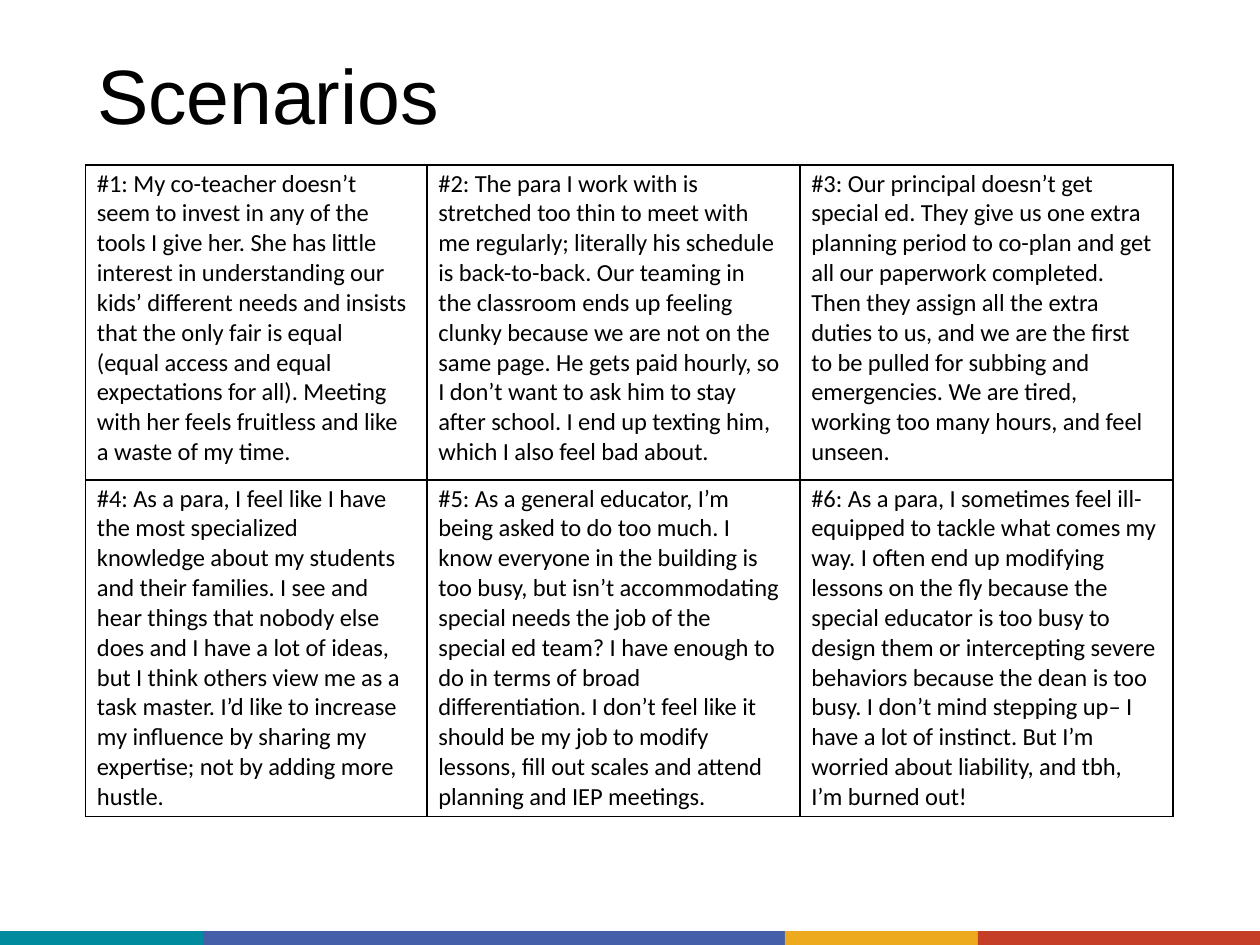
from dataclasses import dataclass

from lxml.etree import SubElement
from pptx import Presentation
from pptx.dml.color import RGBColor
from pptx.enum.shapes import MSO_SHAPE
from pptx.enum.text import MSO_ANCHOR, PP_ALIGN
from pptx.oxml.ns import qn
from pptx.util import Inches, Pt


@dataclass(frozen=True)
class Theme:
    """Colours, fonts and type sizes of the slide."""
    ink: str = "000000"
    teal: str = "008B9F"
    blue: str = "455FA9"
    gold: str = "EEAA1F"
    red: str = "C53E28"
    head: str = "Arial"
    body: str = "Calibri"
    big: int = 44
    small: int = 14
    rule: int = 1
    track: int = -5


THEME = Theme()
BANDS = [(1.61, THEME.teal), (4.62, THEME.blue), (1.53, THEME.gold), (2.24, THEME.red)]
COLS = [2.71, 2.96, 2.96]
ROWS = [2.5, 2.67]
PADS = [[0.15, 0.15, 0.16], [0.15, 0.15, 0.12]]
CASES = [
    [
        "#1: My co-teacher doesn’t seem to invest in any of the tools I give her. "
        "She has little interest in understanding our kids’ different needs and insists "
        "that the only fair is equal (equal access and equal expectations for all). "
        "Meeting with her feels fruitless and like a waste of my time.",
        "#2: The para I work with is stretched too thin to meet with me regularly; "
        "literally his schedule is back-to-back. Our teaming in the classroom ends up "
        "feeling clunky because we are not on the same page. He gets paid hourly, so "
        "I don’t want to ask him to stay after school. I end up texting him, "
        "which I also feel bad about.",
        "#3: Our principal doesn’t get special ed. They give us one extra planning "
        "period to co-plan and get all our paperwork completed.\n"
        "Then they assign all the extra duties to us, and we are the first to be pulled "
        "for subbing and emergencies. We are tired, working too many hours, and feel unseen.",
    ],
    [
        "#4: As a para, I feel like I have the most specialized knowledge about my students "
        "and their families. I see and hear things that nobody else does and I have a lot "
        "of ideas, but I think others view me as a task master. I’d like to increase my "
        "influence by sharing my expertise; not by adding more hustle.",
        "#5: As a general educator, I’m being asked to do too much. I know everyone in the "
        "building is too busy, but isn’t accommodating special needs the job of the special "
        "ed team? I have enough to do in terms of broad differentiation. I don’t feel like "
        "it should be my job to modify lessons, fill out scales and attend planning and "
        "IEP meetings.",
        "#6: As a para, I sometimes feel ill-equipped to tackle what comes my way. I often "
        "end up modifying lessons on the fly because the special educator is too busy to "
        "design them or intercepting severe behaviors because the dean is too busy. I don’t "
        "mind stepping up– I have a lot of instinct. But I’m worried about liability, and "
        "tbh, I’m burned out!",
    ],
]


def style(frame, face, size):
    """Format every paragraph of a text frame."""
    for para in frame.paragraphs:
        para.alignment = PP_ALIGN.LEFT
        para.font.name = face
        para.font.size = Pt(size)
        para.font.color.rgb = RGBColor.from_string(THEME.ink)
        for run in para.runs:
            run.font._element.set("spc", str(THEME.track))


def edge(cell):
    """Rule all four sides of a cell."""
    props = cell._tc.get_or_add_tcPr()
    for side in ("lnL", "lnR", "lnT", "lnB"):
        line = SubElement(props, qn(f"a:{side}"), w=str(Pt(THEME.rule)))
        fill = SubElement(line, qn("a:solidFill"))
        SubElement(fill, qn("a:srgbClr"), val=THEME.ink)


def add_bands(slide, left, top, high):
    """Lay the coloured bands end to end along the foot."""
    for wide, color in BANDS:
        band = slide.shapes.add_shape(
            MSO_SHAPE.RECTANGLE, Inches(left), Inches(top), Inches(wide), Inches(high))
        band.shadow.inherit = False
        band.fill.solid()
        band.fill.fore_color.rgb = RGBColor.from_string(color)
        band.line.fill.background()
        left += wide


def add_title(slide, left, top, wide, high):
    """Place and format the title."""
    title = slide.shapes.title
    title.left, title.top = Inches(left), Inches(top)
    title.width, title.height = Inches(wide), Inches(high)
    frame = title.text_frame
    frame.text = "Scenarios"
    frame.margin_left = frame.margin_right = frame.margin_top = frame.margin_bottom = 0
    frame.vertical_anchor = MSO_ANCHOR.TOP
    style(frame, THEME.head, THEME.big)


def add_cases(slide, left, top):
    """Build the grid of scenarios."""
    table = slide.shapes.add_table(
        len(ROWS), len(COLS), Inches(left), Inches(top),
        Inches(sum(COLS)), Inches(sum(ROWS))).table
    table.first_row = table.horz_banding = False
    for col, wide in zip(table.columns, COLS):
        col.width = Inches(wide)
    for row, high, texts, pads in zip(table.rows, ROWS, CASES, PADS):
        row.height = Inches(high)
        for cell, text, pad in zip(row.cells, texts, pads):
            cell.text = text
            cell.margin_left, cell.margin_right = Inches(0.09), Inches(pad)
            cell.margin_top, cell.margin_bottom = Inches(0.03), 0
            edge(cell)
            cell.fill.background()
            style(cell.text_frame, THEME.body, THEME.small)


def main():
    """Build and save the slide."""
    deck = Presentation()
    deck.slide_width, deck.slide_height = Inches(10), Inches(7.5)
    slide = deck.slides.add_slide(deck.slide_layouts[5])
    add_bands(slide, 0, 7.39, 0.11)
    add_title(slide, 0.77, 0.38, 2.75, 0.75)
    add_cases(slide, 0.68, 1.31)
    deck.save("out.pptx")


if __name__ == "__main__":
    main()
